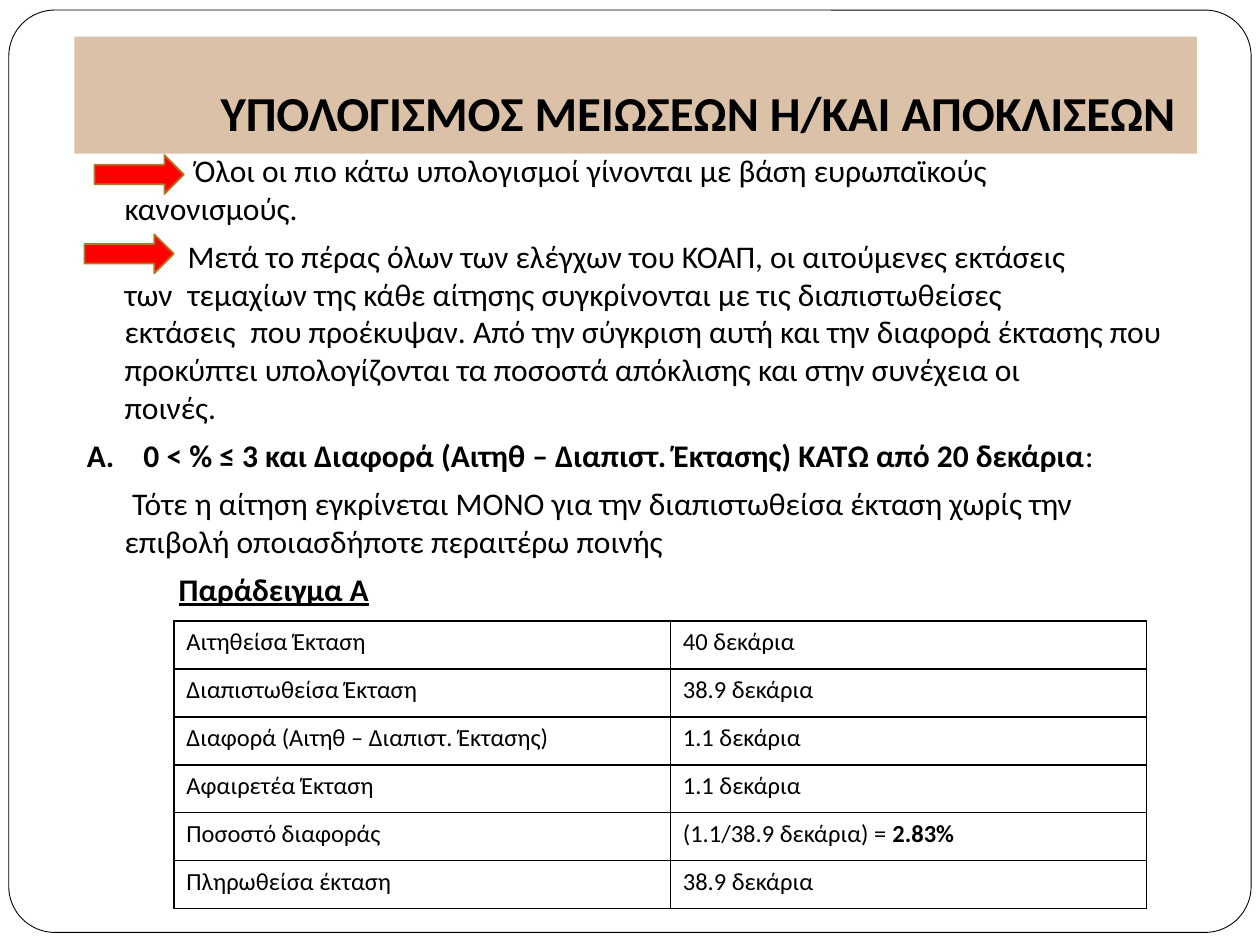
from lxml import etree
from pptx import Presentation
from pptx.dml.color import RGBColor
from pptx.enum.shapes import MSO_SHAPE
from pptx.enum.text import MSO_ANCHOR, PP_ALIGN
from pptx.oxml.ns import qn
from pptx.util import Inches, Pt

FONT = "Calibri"
BLACK, WHITE, TAN, RED, BROWN = "000000", "FFFFFF", "DBC1A7", "FF0000", "B27822"
TITLE = "ΥΠΟΛΟΓΙΣΜΟΣ ΜΕΙΩΣΕΩΝ Ή/ΚΑΙ ΑΠΟΚΛΙΣΕΩΝ"

# Each paragraph: left margin, first-line indent, runs of (text, bold, underline)
BODY = [
    (0.3, -0.3, [("\t\t Όλοι οι πιο κάτω υπολογισμοί γίνονται με βάση ευρωπαϊκούς\v"
                  "κανονισμούς.", False, False)]),
    (0.3, -0.3, [("\t\tΜετά το πέρας όλων των ελέγχων του ΚΟΑΠ, οι αιτούμενες εκτάσεις\v"
                  "των\tτεμαχίων της κάθε αίτησης συγκρίνονται με τις διαπιστωθείσες\v"
                  "εκτάσεις\tπου προέκυψαν. Από την σύγκριση αυτή και την διαφορά έκτασης που\v"
                  "προκύπτει υπολογίζονται τα ποσοστά απόκλισης και στην συνέχεια οι\v"
                  "ποινές.", False, False)]),
    (0.45, -0.45, [("Α.\t0 ˂ % ≤ 3 και Διαφορά (Αιτηθ – Διαπιστ. Έκτασης) ΚΑΤΩ από 20 δεκάρια",
                    True, False), (":", False, False)]),
    (0.3, 0.06, [("Τότε η αίτηση εγκρίνεται ΜΟΝΟ για την διαπιστωθείσα έκταση χωρίς την\v"
                  "επιβολή οποιασδήποτε περαιτέρω ποινής", False, False)]),
    (0.73, 0, [("Παράδειγμα Α", True, True)]),
]

# Each row: label, value, bold ending of the value
ROWS = [
    ("Αιτηθείσα Έκταση", "40 δεκάρια", ""),
    ("Διαπιστωθείσα Έκταση", "38.9 δεκάρια", ""),
    ("Διαφορά (Αιτηθ – Διαπιστ. Έκτασης)", "1.1 δεκάρια", ""),
    ("Αφαιρετέα Έκταση", "1.1 δεκάρια", ""),
    ("Ποσοστό διαφοράς", "(1.1/38.9 δεκάρια) = ", "2.83%"),
    ("Πληρωθείσα έκταση", "38.9 δεκάρια", ""),
]
COL_WIDTHS = (3.94, 3.78)
ROW_HEIGHT = 0.38
ARROWS = [(0.75, 1.23), (0.67, 1.86)]


def rgb(value):
    return RGBColor.from_string(value)


def box(*lengths):
    return [Inches(v) for v in lengths]


def style(r, size, bold=False, underline=False):
    r.font.name, r.font.size = FONT, Pt(size)
    r.font.bold, r.font.underline = bold, underline
    r.font.color.rgb = rgb(BLACK)


def add_runs(p, parts, size):
    for text, bold, underline in parts:
        for i, line in enumerate(text.split("\v")):
            if i:
                p.add_line_break()
            r = p.add_run()
            r.text = line
            style(r, size, bold, underline)


def add_shape(slide, kind, bounds, fill, line, weight):
    sp = slide.shapes.add_shape(kind, *box(*bounds))
    sp.shadow.inherit = False
    sp.fill.solid()
    sp.fill.fore_color.rgb = rgb(fill)
    sp.line.color.rgb = rgb(line)
    sp.line.width = Pt(weight)
    return sp


def add_borders(cell):
    tc_pr = cell._tc.get_or_add_tcPr()
    for i, side in enumerate(("lnL", "lnR", "lnT", "lnB")):
        ln = etree.Element(qn(f"a:{side}"), w=str(Pt(1)))
        fill = etree.SubElement(ln, qn("a:solidFill"))
        etree.SubElement(fill, qn("a:srgbClr"), val=BLACK)
        tc_pr.insert(i, ln)


def add_title(slide):
    title = slide.shapes.title
    title.left, title.top, title.width, title.height = box(0.59, 0.29, 8.91, 0.93)
    title.fill.solid()
    title.fill.fore_color.rgb = rgb(TAN)
    tf = title.text_frame
    tf.text = TITLE
    tf.vertical_anchor = MSO_ANCHOR.BOTTOM
    tf.margin_right, tf.margin_bottom = Inches(0.17), Inches(0.1)
    p = tf.paragraphs[0]
    p.alignment = PP_ALIGN.RIGHT
    style(p.runs[0], 27.9, bold=True)


def add_body(slide):
    tf = slide.shapes.add_textbox(*box(0.59, 1.15, 8.91, 6.14)).text_frame
    tf.word_wrap = True
    for i, (margin, indent, parts) in enumerate(BODY):
        p = tf.add_paragraph() if i else tf.paragraphs[0]
        p.space_before = Pt(5.8)
        p_pr = p._p.get_or_add_pPr()
        p_pr.set("marL", str(Inches(margin)))
        p_pr.set("indent", str(Inches(indent)))
        add_runs(p, parts, 18)


def add_example_table(slide):
    size = (sum(COL_WIDTHS), ROW_HEIGHT * len(ROWS))
    table = slide.shapes.add_table(len(ROWS), 2, *box(1.38, 4.93, *size)).table
    table.first_row = table.horz_banding = False
    for column, width in zip(table.columns, COL_WIDTHS):
        column.width = Inches(width)
    for i, (label, value, ending) in enumerate(ROWS):
        table.rows[i].height = Inches(ROW_HEIGHT)
        value_parts = [(value, False, False)]
        if ending:
            value_parts.append((ending, True, False))
        for j, parts in enumerate(([(label, False, False)], value_parts)):
            cell = table.cell(i, j)
            cell.fill.background()
            add_borders(cell)
            add_runs(cell.text_frame.paragraphs[0], parts, 14)


def main():
    prs = Presentation()
    prs.slide_width, prs.slide_height = box(10, 7.5)
    slide = prs.slides.add_slide(prs.slide_layouts[5])
    frame = add_shape(slide, MSO_SHAPE.ROUNDED_RECTANGLE, (0.07, 0.08, 9.86, 7.32),
                      WHITE, BLACK, 0.5)
    frame.adjustments[0] = 0.05
    slide.shapes.title._element.addprevious(frame._element)
    add_title(slide)
    add_body(slide)
    for left, top in ARROWS:
        add_shape(slide, MSO_SHAPE.RIGHT_ARROW, (left, top, 0.71, 0.31), RED, BROWN, 1)
    add_example_table(slide)
    prs.save("out.pptx")


if __name__ == "__main__":
    main()
